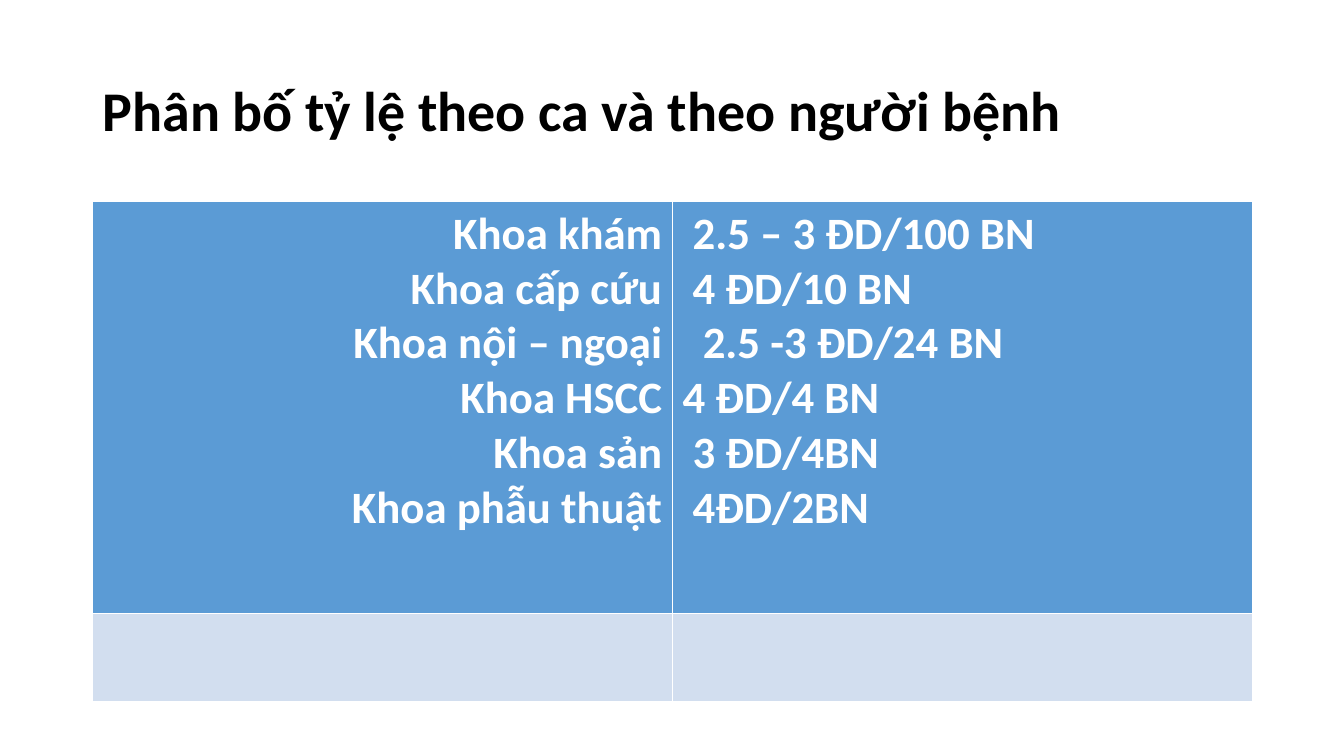
from pptx import Presentation
from pptx import util as u
from pptx.dml import color
from pptx.enum import text

WIDTH, HEIGHT = u.Inches(13.33), u.Inches(7.5)
LEFT, CONTENT_WIDTH = u.Inches(0.92), u.Inches(11.5)
SPACE = u.Inches(0.1)


def rgb(value):
    return color.RGBColor.from_string(value)


def write(paragraph, content, size=32, fill="FFFFFF", align=text.PP_ALIGN.LEFT, indent=0):
    run = paragraph.add_run()
    run.text = content
    run.font.name = "Calibri"
    run.font.size = u.Pt(size)
    run.font.bold = True
    run.font.color.rgb = rgb(fill)
    paragraph.alignment = align
    if indent:
        properties = paragraph._p.get_or_add_pPr()
        properties.set("marL", str(indent * SPACE))
        properties.set("indent", "0")


presentation = Presentation()
presentation.slide_width, presentation.slide_height = WIDTH, HEIGHT
slide = presentation.slides.add_slide(presentation.slide_layouts[6])

title = slide.shapes.add_textbox(LEFT, u.Inches(0.4), CONTENT_WIDTH, u.Inches(1.45))
title.text_frame.word_wrap = True
title.text_frame.vertical_anchor = text.MSO_ANCHOR.MIDDLE
heading = title.text_frame.paragraphs[0]
heading.line_spacing = 0.9
write(heading, "Phân bố tỷ lệ theo ca và theo người bệnh", size=40, fill="000000")

ratios = [
    ("Khoa khám", "2.5 – 3 ĐD/100 BN", 1),
    ("Khoa cấp cứu", "4 ĐD/10 BN", 1),
    ("Khoa nội – ngoại", "2.5 -3 ĐD/24 BN", 2),
    ("Khoa HSCC", "4 ĐD/4 BN", 0),
    ("Khoa sản", "3 ĐD/4BN", 1),
    ("Khoa phẫu thuật", "4ĐD/2BN", 1),
]

table = slide.shapes.add_table(2, 2, LEFT, u.Inches(2), CONTENT_WIDTH, u.Inches(4.96)).table
for row, height, fill in zip(table.rows, (4.09, 0.87), ("5B9BD5", "D2DEEF")):
    row.height = u.Inches(height)
    for cell in row.cells:
        cell.fill.solid()
        cell.fill.fore_color.rgb = rgb(fill)

departments, staffing = (table.cell(0, column).text_frame for column in range(2))
for index, (department, ratio, indent) in enumerate(ratios):
    if index:
        departments.add_paragraph()
        staffing.add_paragraph()
    write(departments.paragraphs[index], department, align=text.PP_ALIGN.RIGHT)
    write(staffing.paragraphs[index], ratio, indent=indent)

presentation.save("out.pptx")
